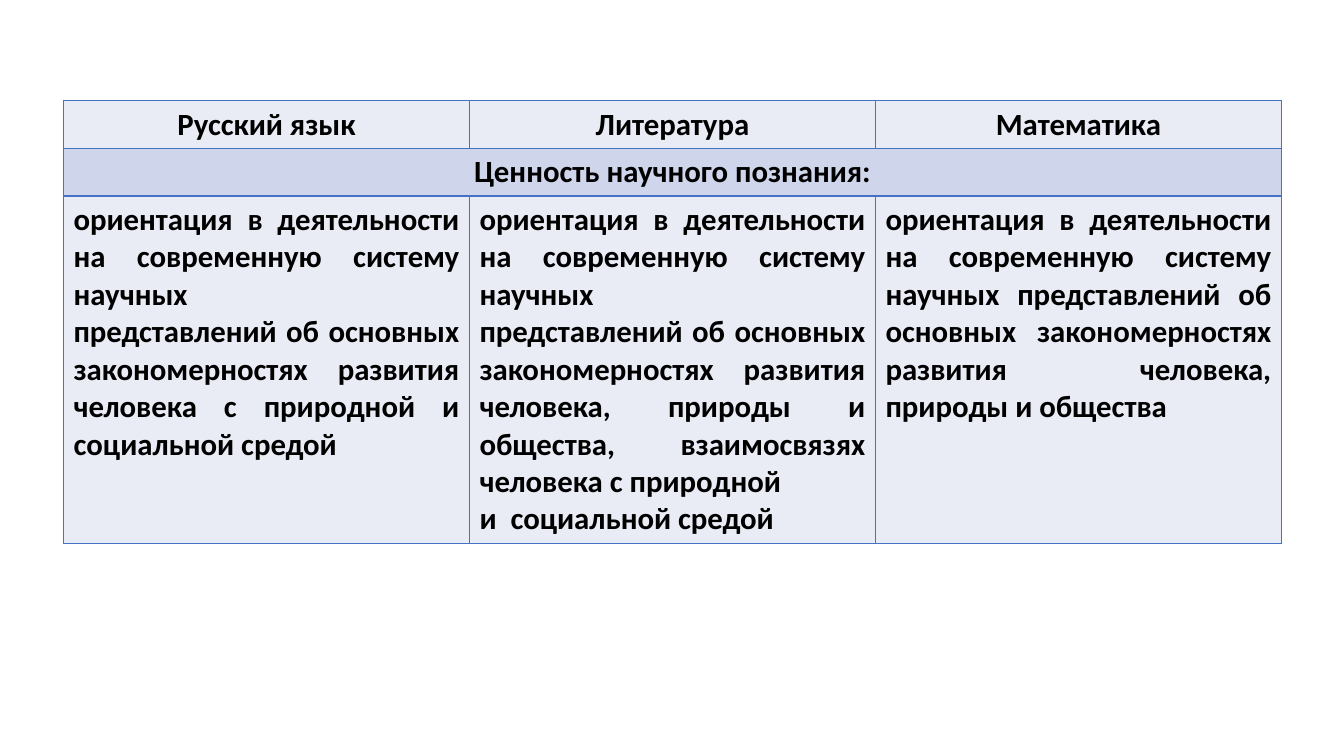
from lxml import etree
from pptx import Presentation
from pptx.dml.color import RGBColor
from pptx.enum import text
from pptx.oxml import ns
from pptx.util import Inches, Pt

BORDER = "4472C4"
PALE, DEEP = "E9EBF5", "CFD5EA"

subjects = ["Русский язык", "Литература", "Математика"]
value_title = "Ценность научного познания:"
outcomes = [
    ["ориентация в деятельности на современную систему научных",
     "представлений об основных закономерностях развития человека "
     "с природной и социальной средой"],
    ["ориентация в деятельности на современную систему научных",
     "представлений об основных закономерностях развития человека, "
     "природы и общества, взаимосвязях человека с природной",
     "и  социальной средой"],
    ["ориентация в деятельности на современную систему научных "
     "представлений об основных закономерностях развития человека, "
     "природы и общества"],
]


def write(cell, paragraphs, align, size=22, color="000000"):
    cell.text = "\n".join(paragraphs)
    for paragraph in cell.text_frame.paragraphs:
        paragraph.alignment = align
        font = paragraph.runs[0].font
        font.name, font.size, font.bold = "Calibri", Pt(size), True
        font.color.rgb = RGBColor.from_string(color)


def paint(cell, fill):
    """Give the cell a thin border on all sides and a solid fill."""
    properties = cell._tc.get_or_add_tcPr()
    for side in ("a:lnL", "a:lnR", "a:lnT", "a:lnB"):
        line = etree.SubElement(properties, ns.qn(side), w=str(Pt(1)))
        solid = etree.SubElement(line, ns.qn("a:solidFill"))
        etree.SubElement(solid, ns.qn("a:srgbClr"), val=BORDER)
    cell.fill.solid()
    cell.fill.fore_color.rgb = RGBColor.from_string(fill)


deck = Presentation()
deck.slide_width, deck.slide_height = Inches(13.33), Inches(7.5)
slide = deck.slides.add_slide(deck.slide_layouts[6])

table = slide.shapes.add_table(
    3, 3, Inches(0.63), Inches(1), Inches(12.08), Inches(4.38)).table
for row, height, fill in zip(table.rows, (0.47, 0.47, 3.44), (PALE, DEEP, PALE)):
    row.height = Inches(height)
    for cell in row.cells:
        paint(cell, fill)

for column, (subject, outcome) in enumerate(zip(subjects, outcomes)):
    write(table.cell(0, column), [subject], text.PP_ALIGN.CENTER)
    write(table.cell(2, column), outcome, text.PP_ALIGN.JUSTIFY)

table.cell(1, 0).merge(table.cell(1, 2))
write(table.cell(1, 0), [value_title], text.PP_ALIGN.CENTER)

deck.save("out.pptx")
